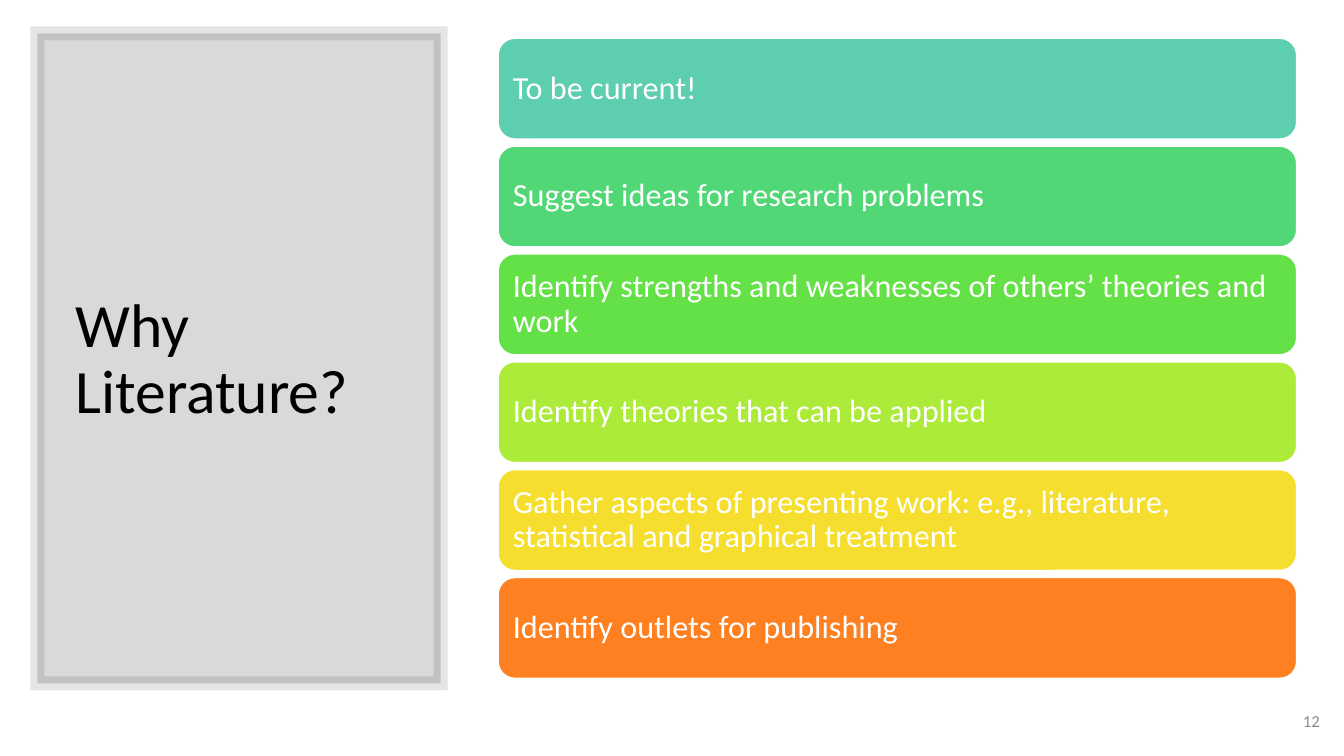
from lxml.etree import SubElement
from pptx import Presentation
from pptx.dml.color import RGBColor
from pptx.enum.shapes import MSO_SHAPE
from pptx.enum.text import MSO_ANCHOR, PP_ALIGN
from pptx.oxml.ns import qn
from pptx.util import Inches, Pt

BLACK = RGBColor(0x00, 0x00, 0x00)
WHITE = RGBColor(0xFF, 0xFF, 0xFF)
GRAY = RGBColor(0x8C, 0x8C, 0x8C)
TEAL = RGBColor(0x5D, 0xCE, 0xAF)
GREEN = RGBColor(0x51, 0xD7, 0x75)
LEAF = RGBColor(0x64, 0xE1, 0x46)
LIME = RGBColor(0xAD, 0xEB, 0x3A)
YELLOW = RGBColor(0xF5, 0xDE, 0x2D)
ORANGE = RGBColor(0xFF, 0x80, 0x21)

TITLE = "Why Literature?"
PAGE_NUMBER = "12"
REASONS = [
    ("To be current!", TEAL),
    ("Suggest ideas for research problems", GREEN),
    ("Identify strengths and weaknesses of others’ theories and work", LEAF),
    ("Identify theories that can be applied", LIME),
    ("Gather aspects of presenting work: e.g., literature, "
     "statistical and graphical treatment", YELLOW),
    ("Identify outlets for publishing", ORANGE),
]

FONT = "Calibri"
PANEL = (0.37, 0.33, 4, 6.45)
TITLE_AREA = (0.65, 0.7, 3.46, 5.75)
NUMBER_AREA = (10.19, 6.95, 3, 0.4)
BAR_LEFT, BAR_TOP, BAR_WIDTH, BAR_HEIGHT = 4.94, 0.38, 7.92, 1
BAR_GAP = 0.07


def add_block(page, preset, area, fill, line, line_width):
    """Add a filled and outlined preset shape."""
    block = page.shapes.add_shape(preset, *map(Inches, area))
    block.shadow.inherit = False
    block.fill.solid()
    block.fill.fore_color.rgb = fill
    block.line.color.rgb = line
    block.line.width = Pt(line_width)
    return block


def write(shape, text, size, color, align=PP_ALIGN.LEFT, spacing=1.0, inset=0.1):
    """Put one vertically centred paragraph into a shape."""
    frame = shape.text_frame
    frame.word_wrap = True
    frame.vertical_anchor = MSO_ANCHOR.MIDDLE
    frame.margin_left = frame.margin_right = Inches(inset)
    para = frame.paragraphs[0]
    para.text = text
    para.alignment = align
    para.line_spacing = spacing
    para.font.name = FONT
    para.font.size = Pt(size)
    para.font.color.rgb = color


def set_opacity(fill_parent, percent):
    """Make the solid colour below an element partly transparent."""
    color = fill_parent.find(qn("a:solidFill")).find(qn("a:srgbClr"))
    SubElement(color, qn("a:alpha")).set("val", str(percent * 1000))


def add_panel(page):
    """Add the translucent panel with its mitred outline."""
    panel = add_block(page, MSO_SHAPE.RECTANGLE, PANEL, BLACK, BLACK, 10)
    properties = panel.fill._xPr
    outline = properties.find(qn("a:ln"))
    set_opacity(properties, 15)
    set_opacity(outline, 10)
    SubElement(outline, qn("a:miter")).set("lim", "800000")


def main():
    """Build the slide and save it."""
    deck = Presentation()
    deck.slide_width, deck.slide_height = Inches(13.33), Inches(7.5)
    page = deck.slides.add_slide(deck.slide_layouts[6])

    add_panel(page)
    title_box = page.shapes.add_textbox(*map(Inches, TITLE_AREA))
    write(title_box, TITLE, 44, BLACK, spacing=0.9)

    for row, (reason, color) in enumerate(REASONS):
        top = BAR_TOP + row * (BAR_HEIGHT + BAR_GAP)
        area = (BAR_LEFT, top, BAR_WIDTH, BAR_HEIGHT)
        bar = add_block(page, MSO_SHAPE.ROUNDED_RECTANGLE, area, color, WHITE, 1)
        write(bar, reason, 23, WHITE, spacing=0.9)

    number_box = page.shapes.add_textbox(*map(Inches, NUMBER_AREA))
    write(number_box, PAGE_NUMBER, 12, GRAY, align=PP_ALIGN.RIGHT)
    deck.save("out.pptx")


if __name__ == "__main__":
    main()
